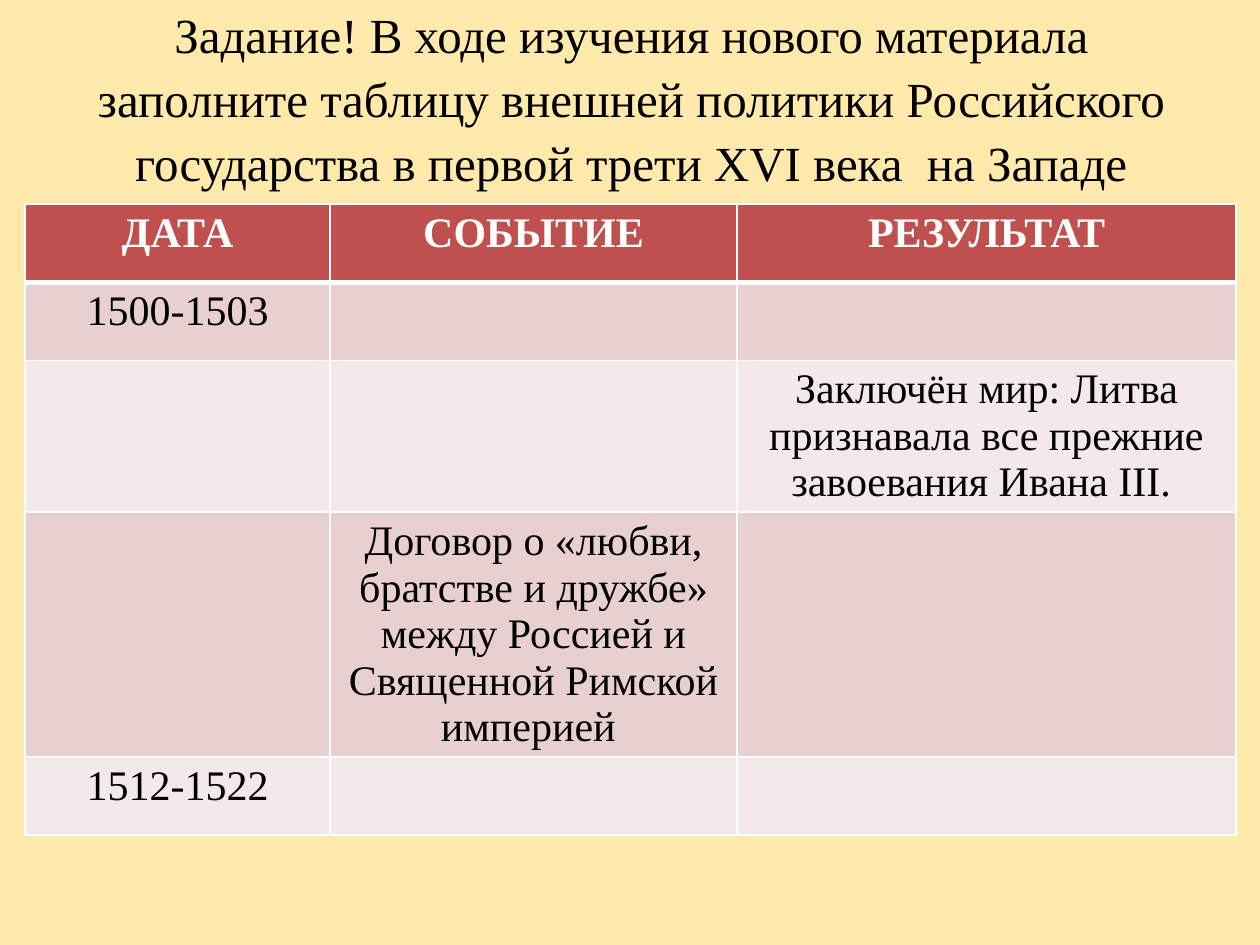
from lxml import etree
from pptx import Presentation
from pptx.dml.color import RGBColor
from pptx.enum.text import MSO_ANCHOR, MSO_AUTO_SIZE, PP_ALIGN
from pptx.oxml.ns import qn
from pptx.util import Inches, Pt

CENTER = PP_ALIGN.CENTER
MIDDLE = MSO_ANCHOR.MIDDLE
NO_AUTOFIT = MSO_AUTO_SIZE.NONE

CREAM = RGBColor(0xFF, 0xEA, 0xAB)
RED = RGBColor(0xC0, 0x50, 0x4D)
PINK = RGBColor(0xE8, 0xD0, 0xD0)
PALE_PINK = RGBColor(0xF4, 0xE9, 0xE9)
WHITE = RGBColor(0xFF, 0xFF, 0xFF)
BLACK = RGBColor(0, 0, 0)
FONT = "Times New Roman"

HEADING = ("Задание! В ходе изучения нового материала заполните таблицу "
           "внешней политики Российского государства в первой трети XVI века  на Западе")
EVENTS = [
    ("ДАТА", "СОБЫТИЕ", "РЕЗУЛЬТАТ"),
    ("1500-1503", "", ""),
    ("", "", "Заключён мир: Литва признавала все прежние завоевания Ивана III. "),
    ("", "Договор о «любви, братстве и дружбе» между Россией и "
         "Священной Римской империей ", ""),
    ("1512-1522", "", ""),
]
COLUMN_WIDTHS = (2.42, 3.23, 3.96)
ROW_HEIGHT = 0.62


def write_text(frame, text, size, color=BLACK, bold=False, line_spacing=None):
    paragraph = frame.paragraphs[0]
    paragraph.alignment = CENTER
    paragraph.line_spacing = line_spacing
    run = paragraph.add_run()
    run.text = text
    run.font.name = FONT
    run.font.size = Pt(size)
    run.font.bold = bold
    run.font.color.rgb = color


def set_borders(cell, top, bottom):
    """Draw white borders; top and bottom are widths in points."""
    properties = cell._tc.get_or_add_tcPr()
    for side, width in (("L", 1), ("R", 1), ("T", top), ("B", bottom)):
        line = etree.SubElement(properties, qn(f"a:ln{side}"), w=str(Pt(width)))
        fill = etree.SubElement(line, qn("a:solidFill"))
        etree.SubElement(fill, qn("a:srgbClr"), val=str(WHITE))


class SlideBuilder:
    def __init__(self, slide):
        self.slide = slide

    def background(self, color):
        fill = self.slide.background.fill
        fill.solid()
        fill.fore_color.rgb = color

    def title(self, text, left, top, width, height):
        title = self.slide.shapes.title
        title.left, title.top = Inches(left), Inches(top)
        title.width, title.height = Inches(width), Inches(height)
        frame = title.text_frame
        frame.word_wrap = True
        frame.auto_size = NO_AUTOFIT
        frame.vertical_anchor = MIDDLE
        write_text(frame, text, 28, line_spacing=1.09)

    def table(self, rows, left, top, widths, row_height):
        table = self.slide.shapes.add_table(
            len(rows), len(widths), Inches(left), Inches(top),
            Inches(sum(widths)), Inches(row_height * len(rows))).table
        for column, width in zip(table.columns, widths):
            column.width = Inches(width)
        for r, row in enumerate(rows):
            table.rows[r].height = Inches(row_height)
            is_header = r == 0
            band = RED if is_header else PINK if r % 2 else PALE_PINK
            for c, text in enumerate(row):
                cell = table.cell(r, c)
                set_borders(cell, top=3 if r == 1 else 1, bottom=3 if is_header else 1)
                cell.fill.solid()
                cell.fill.fore_color.rgb = band
                if text:
                    write_text(cell.text_frame, text, 24,
                               color=WHITE if is_header else BLACK, bold=is_header)


def main():
    deck = Presentation()
    deck.slide_width, deck.slide_height = Inches(10), Inches(7.5)
    title_only = deck.slide_layouts[5]
    builder = SlideBuilder(deck.slides.add_slide(title_only))
    builder.background(CREAM)
    builder.title(HEADING, 0.51, 0.13, 9, 1.25)
    builder.table(EVENTS, 0.2, 1.62, COLUMN_WIDTHS, ROW_HEIGHT)
    deck.save("out.pptx")


if __name__ == "__main__":
    main()
